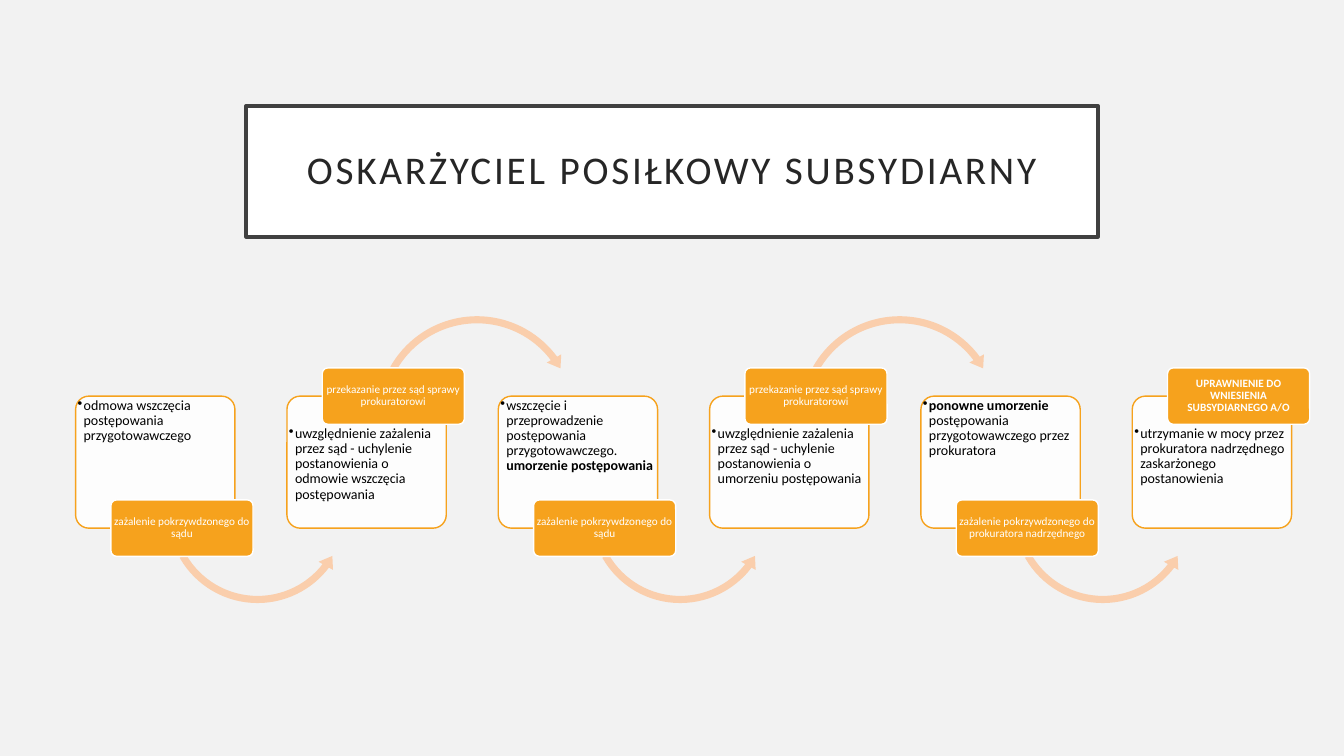
from dataclasses import dataclass

from lxml import etree
from pptx import Presentation
from pptx.dml.color import RGBColor
from pptx.enum import shapes, text
from pptx.oxml import ns
from pptx.util import Inches, Pt


@dataclass(frozen=True)
class Theme:
    font: str = "Calibri"
    back: str = "F2F2F2"
    white: str = "FFFFFF"
    frame: str = "404040"
    title: str = "262626"
    ink: str = "000000"
    gold: str = "F6A21D"
    peach: str = "FACEAC"
    head: int = 28
    body: int = 10
    note: int = 8


THEME = Theme()
KIND = shapes.MSO_SHAPE
ALIGN = text.PP_ALIGN
ANCHOR = text.MSO_ANCHOR

# Card text as (words, bold) parts, then tag text and its weight
STEPS = [
    ([("odmowa wszczęcia postępowania przygotowawczego", False)],
     "zażalenie pokrzywdzonego do sądu", False),
    ([("uwzględnienie zażalenia przez sąd - uchylenie postanowienia o "
       "odmowie wszczęcia postępowania", False)],
     "przekazanie przez sąd sprawy prokuratorowi", False),
    ([("wszczęcie i przeprowadzenie postępowania przygotowawczego. ", False),
      ("umorzenie postępowania", True)],
     "zażalenie pokrzywdzonego do sądu", False),
    ([("uwzględnienie zażalenia przez sąd - uchylenie postanowienia o "
       "umorzeniu postępowania", False)],
     "przekazanie przez sąd sprawy prokuratorowi", False),
    ([("ponowne umorzenie", True),
      (" postępowania przygotowawczego przez prokuratora", False)],
     "zażalenie pokrzywdzonego do prokuratora nadrzędnego", False),
    ([("utrzymanie w mocy przez prokuratora nadrzędnego zaskarżonego "
       "postanowienia", False)],
     "UPRAWNIENIE DO WNIESIENIA SUBSYDIARNEGO A/O", True),
]


def rgb(code):
    return RGBColor.from_string(code)


def style(run, size, color, bold=False):
    run.font.name = THEME.font
    run.font.size = Pt(size)
    run.font.color.rgb = rgb(color)
    run.font.bold = bold


def setup(frame, side, edge, anchor):
    """Wrap the text and set its insets (left and right, top and bottom)."""
    frame.word_wrap = True
    frame.auto_size = text.MSO_AUTO_SIZE.NONE
    frame.margin_left = frame.margin_right = Inches(side)
    frame.margin_top = frame.margin_bottom = Inches(edge)
    frame.vertical_anchor = anchor


def paint(shape, fill, line=None, width=1):
    shape.fill.solid()
    shape.fill.fore_color.rgb = rgb(fill)
    if line:
        shape.line.color.rgb = rgb(line)
        shape.line.width = Pt(width)
    else:
        shape.line.fill.background()


def block(slide, kind, box, fill, line=None, adj=()):
    shape = slide.shapes.add_shape(kind, *map(Inches, box))
    shape.shadow.inherit = False
    paint(shape, fill, line)
    for i, value in enumerate(adj):
        shape.adjustments[i] = value
    return shape


def title(slide, box):
    shape = slide.shapes.title
    shape.left, shape.top, shape.width, shape.height = map(Inches, box)
    paint(shape, THEME.white, THEME.frame, 2.5)
    frame = shape.text_frame
    frame.text = "OSKARŻYCIEL POSIŁKOWY SUBSYDIARNY"
    setup(frame, 0.2, 0.2, ANCHOR.MIDDLE)
    para = frame.paragraphs[0]
    para.alignment = ALIGN.CENTER
    para.line_spacing = 0.9
    run = para.runs[0]
    style(run, THEME.head, THEME.title)
    run.font._element.set("spc", "200")


def card(slide, box, parts, drop):
    """White card whose bulleted text starts drop inches below its top."""
    left, top, wide, high = box
    shape = block(slide, KIND.ROUNDED_RECTANGLE, box, THEME.white, THEME.gold, [0.1])
    color = shape.fill._xPr.find(".//" + ns.qn("a:srgbClr"))
    etree.SubElement(color, ns.qn("a:alpha"), val="90000")

    area = (left, top + drop, wide, high - 0.28)
    frame = slide.shapes.add_textbox(*map(Inches, area)).text_frame
    setup(frame, 0.02, 0.02, ANCHOR.TOP)
    para = frame.paragraphs[0]
    props = para._p.get_or_add_pPr()
    props.set("marL", str(Inches(0.06)))
    props.set("indent", str(Inches(-0.06)))
    etree.SubElement(props, ns.qn("a:buChar"), char="•")
    para.line_spacing = 0.9
    for words, bold in parts:
        run = para.add_run()
        run.text = words
        style(run, THEME.body, THEME.ink, bold)


def tag(slide, box, words, bold):
    shape = block(slide, KIND.ROUNDED_RECTANGLE, box, THEME.gold, THEME.white, [0.1])
    frame = shape.text_frame
    frame.text = words
    setup(frame, 0, 0, ANCHOR.MIDDLE)
    para = frame.paragraphs[0]
    para.alignment = ALIGN.CENTER
    para.line_spacing = 0.9
    style(para.runs[0], THEME.note, THEME.white, bold)


def arrow(slide, left, top, up):
    """Arc to the next card, over or under the row that starts at top."""
    if up:
        block(slide, KIND.CIRCULAR_ARROW, (left + 0.85, top - 0.84, 2.07, 2.07),
              THEME.peach, adj=[0.034, 4.239, 194.006, 125.755, 0.04])
    else:
        block(slide, KIND.LEFT_CIRCULAR_ARROW, (left + 0.87, top + 0.23, 1.87, 1.87),
              THEME.peach, adj=[0.038, 4.741, 22.496, 90.245, 0.044])


def flow(slide, box):
    """Row of cards, with tags and arrows below and above by turns."""
    left, top, wide, high = box
    size = 1.58
    pitch = (wide - size) / (len(STEPS) - 1)
    for i, (parts, words, bold) in enumerate(STEPS):
        x = left + i * pitch
        up = i % 2 == 1
        card(slide, (x, top, size, high), parts, 0.28 if up else 0)
        if i < len(STEPS) - 1:
            arrow(slide, x, top, up)
        mid = top if up else top + high
        tag(slide, (x + 0.35, mid - 0.28, 1.41, 0.56), words, bold)


def main():
    deck = Presentation()
    deck.slide_width, deck.slide_height = Inches(13.33), Inches(7.5)
    slide = deck.slides.add_slide(deck.slide_layouts[5])
    slide.background.fill.solid()
    slide.background.fill.fore_color.rgb = rgb(THEME.back)
    title(slide, (2.44, 1.05, 8.45, 1.3))
    flow(slide, (0.75, 3.93, 12.06, 1.31))
    deck.save("out.pptx")


if __name__ == "__main__":
    main()
